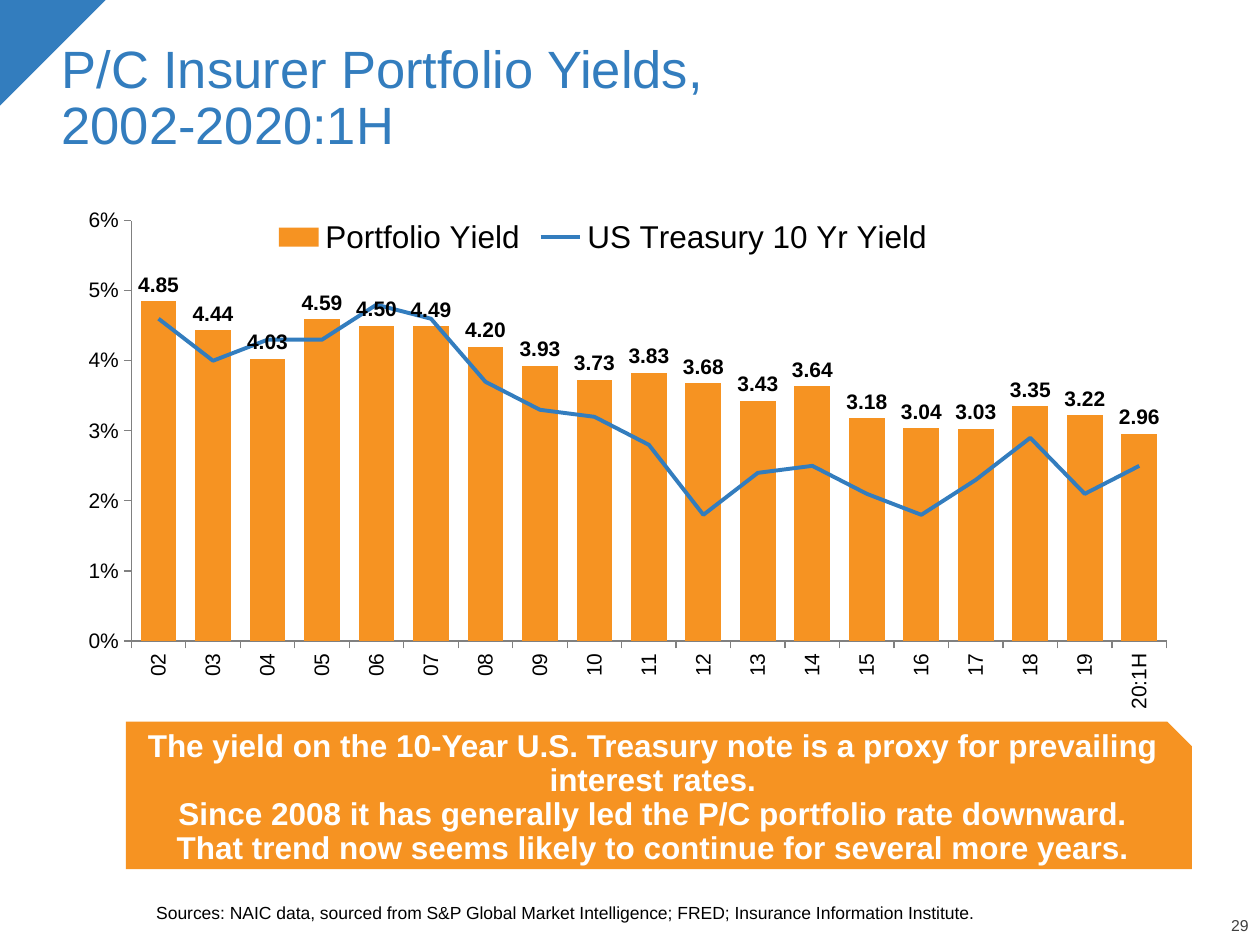
from dataclasses import dataclass
from pptx import Presentation
from pptx.chart.data import CategoryChartData as Data
from pptx.dml.color import RGBColor as Rgb
from pptx.enum.chart import XL_CHART_TYPE as Kind, XL_LABEL_POSITION as Spot
from pptx.enum.chart import XL_LEGEND_POSITION as Side, XL_MARKER_STYLE as Mark
from pptx.enum.chart import XL_TICK_MARK as Tick
from pptx.enum.shapes import MSO_SHAPE as Geo
from pptx.enum.text import MSO_ANCHOR as Anchor, PP_ALIGN as Align
from pptx.oxml import parse_xml
from pptx.oxml.ns import nsdecls
from pptx.util import Cm, Pt


@dataclass(frozen=True)
class Theme:
    font: str = "Arial"
    blue: str = "337DBE"
    gold: str = "F69322"
    white: str = "FFFFFF"
    black: str = "000000"
    grey: str = "404040"
    rule: str = "808080"
    title: int = 30
    body: int = 18
    label: int = 12
    source: int = 10
    page: int = 9


YEARS = [f"{year:02}" for year in range(2, 20)] + ["20:1H"]
YIELD = [4.85, 4.44, 4.03, 4.59, 4.5, 4.49, 4.2, 3.93, 3.73, 3.83,
         3.68, 3.43, 3.64, 3.18, 3.04, 3.03, 3.35, 3.22, 2.96]
NOTE = [4.6, 4, 4.3, 4.3, 4.8, 4.6, 3.7, 3.3, 3.2, 2.8,
        1.8, 2.4, 2.5, 2.1, 1.8, 2.3, 2.9, 2.1, 2.5]


class Deck:
    def __init__(self, theme):
        self.theme = theme
        self.prs = Presentation()
        self.prs.slide_width, self.prs.slide_height = Cm(25.4), Cm(19.05)
        self.slide = self.prs.slides.add_slide(self.prs.slide_layouts[5])

    def font(self, font, size, color, bold=False):
        font.name, font.size, font.bold = self.theme.font, Pt(size), bold
        font.color.rgb = Rgb.from_string(color)

    def label(self, shape, text, size, color, bold=False, align=Align.LEFT,
              anchor=Anchor.BOTTOM, inset=(0, 0, 0, 0)):
        frame = shape.text_frame
        frame.text = text
        frame.word_wrap, frame.vertical_anchor = True, anchor
        (frame.margin_left, frame.margin_top,
         frame.margin_right, frame.margin_bottom) = map(Cm, inset)
        for para in frame.paragraphs:
            para.alignment, para.line_spacing = align, 0.9
            for run in para.runs:
                self.font(run.font, size, color, bold)

    def title(self, text, box):
        shape = self.slide.shapes.title
        shape.left, shape.top, shape.width, shape.height = map(Cm, box)
        self.label(shape, text, self.theme.title, self.theme.blue,
                   inset=(0.25, 0.13, 0.25, 0.13))

    def text(self, text, box, size, color, **style):
        shape = self.slide.shapes.add_textbox(*map(Cm, box))
        self.label(shape, text, size, color, **style)

    def shape(self, geo, box, color, turn=0):
        shape = self.slide.shapes.add_shape(geo, *map(Cm, box))
        shape.shadow.inherit = False
        shape.fill.solid()
        shape.fill.fore_color.rgb = Rgb.from_string(color)
        shape.line.fill.background()
        shape.rotation = turn
        return shape

    def chart(self, cats, bars, line, box, plot):
        data = Data()
        data.categories = cats
        for name, vals in (bars, line):
            data.add_series(name, vals)
        chart = self.slide.shapes.add_chart(
            Kind.COLUMN_CLUSTERED, *map(Cm, box), data).chart
        self.font(chart.font, self.theme.body, self.theme.black)
        chart.has_title = False
        chart.has_legend = True
        chart.legend.position = Side.TOP
        chart.legend.include_in_layout = False
        self.split(chart)
        self.place(chart, plot)
        self.bars(chart.plots[0])
        self.line(chart.plots[1].series[0])
        self.axes(chart)

    def split(self, chart):
        bar = chart.element.xpath(".//c:barChart")[0]
        ser = bar.xpath("c:ser")[1]
        for flag in ser.xpath("c:invertIfNegative"):
            ser.remove(flag)
        line = parse_xml(
            f'<c:lineChart {nsdecls("c")}><c:grouping val="standard"/>'
            '<c:varyColors val="0"/><c:marker val="1"/></c:lineChart>')
        line.insert(2, ser)
        for axis in bar.xpath("c:axId"):
            line.append(parse_xml(
                f'<c:axId {nsdecls("c")} val="{axis.get("val")}"/>'))
        bar.addnext(line)

    def place(self, chart, plot):
        area = chart.element.xpath(".//c:plotArea")[0]
        for old in area.xpath("c:layout"):
            area.remove(old)
        modes = "".join(f'<c:{key}Mode val="edge"/>' for key in "xy")
        sizes = "".join(f'<c:{key} val="{val}"/>'
                        for key, val in zip("xywh", plot))
        area.insert(0, parse_xml(
            f'<c:layout {nsdecls("c")}><c:manualLayout>'
            f'<c:layoutTarget val="inner"/>{modes}{sizes}'
            '</c:manualLayout></c:layout>'))

    def bars(self, plot):
        plot.gap_width, plot.vary_by_categories = 52, False
        ser = plot.series[0]
        ser.format.fill.solid()
        ser.format.fill.fore_color.rgb = Rgb.from_string(self.theme.gold)
        tags = ser.data_labels
        tags.show_value, tags.position = True, Spot.OUTSIDE_END
        tags.number_format, tags.number_format_is_linked = "#,##0.00", False
        self.font(tags.font, self.theme.label, self.theme.black, True)

    def line(self, ser):
        ser.smooth = False
        ser.marker.style = Mark.NONE
        ser.format.line.width = Pt(2.25)
        ser.format.line.color.rgb = Rgb.from_string(self.theme.blue)

    def axes(self, chart):
        cat, val = chart.category_axis, chart.value_axis
        for axis in (cat, val):
            axis.has_major_gridlines = False
            axis.major_tick_mark, axis.minor_tick_mark = Tick.OUTSIDE, Tick.NONE
            axis.format.line.color.rgb = Rgb.from_string(self.theme.rule)
            self.font(axis.tick_labels.font, self.theme.label, self.theme.black)
        turn = chart.element.xpath(".//c:catAx/c:txPr/a:bodyPr")[0]
        turn.set("rot", "-5400000")
        val.minimum_scale, val.maximum_scale, val.major_unit = 0, 6, 1
        val.tick_labels.number_format = '0"%"'
        val.tick_labels.number_format_is_linked = False


def main():
    theme = Theme()
    deck = Deck(theme)
    deck.shape(Geo.RIGHT_TRIANGLE, (0, 0, 2.13, 2.13), theme.blue, 90)
    deck.text("29", (23.95, 18.52, 1.22, 0.33), theme.page, theme.grey,
              align=Align.RIGHT)
    deck.chart(YEARS, ("Portfolio Yield", YIELD),
               ("US Treasury 10 Yr Yield", NOTE),
               (0.56, 4.11, 23.19, 11.3), (0.09, 0.03, 0.9, 0.75))
    deck.title("P/C Insurer Portfolio Yields,\v2002-2020:1H",
               (0.99, 0.64, 23.5, 2.64))
    deck.text("Sources: NAIC data, sourced from S&P Global Market "
              "Intelligence; FRED; Insurance Information Institute.",
              (3.15, 17.48, 21.34, 1.14), theme.source, theme.black)
    box = deck.shape(Geo.SNIP_1_RECTANGLE, (2.54, 14.55, 21.49, 2.97),
                     theme.gold)
    deck.label(box, "The yield on the 10-Year U.S. Treasury note is a proxy "
               "for prevailing interest rates.\v"
               "Since 2008 it has generally led the P/C portfolio rate "
               "downward.\vThat trend now seems likely to continue for "
               "several more years.", theme.body, theme.white, bold=True,
               align=Align.CENTER, anchor=Anchor.MIDDLE,
               inset=(0.25, 0.13, 0.25, 0.25))
    deck.prs.save("out.pptx")


if __name__ == "__main__":
    main()
